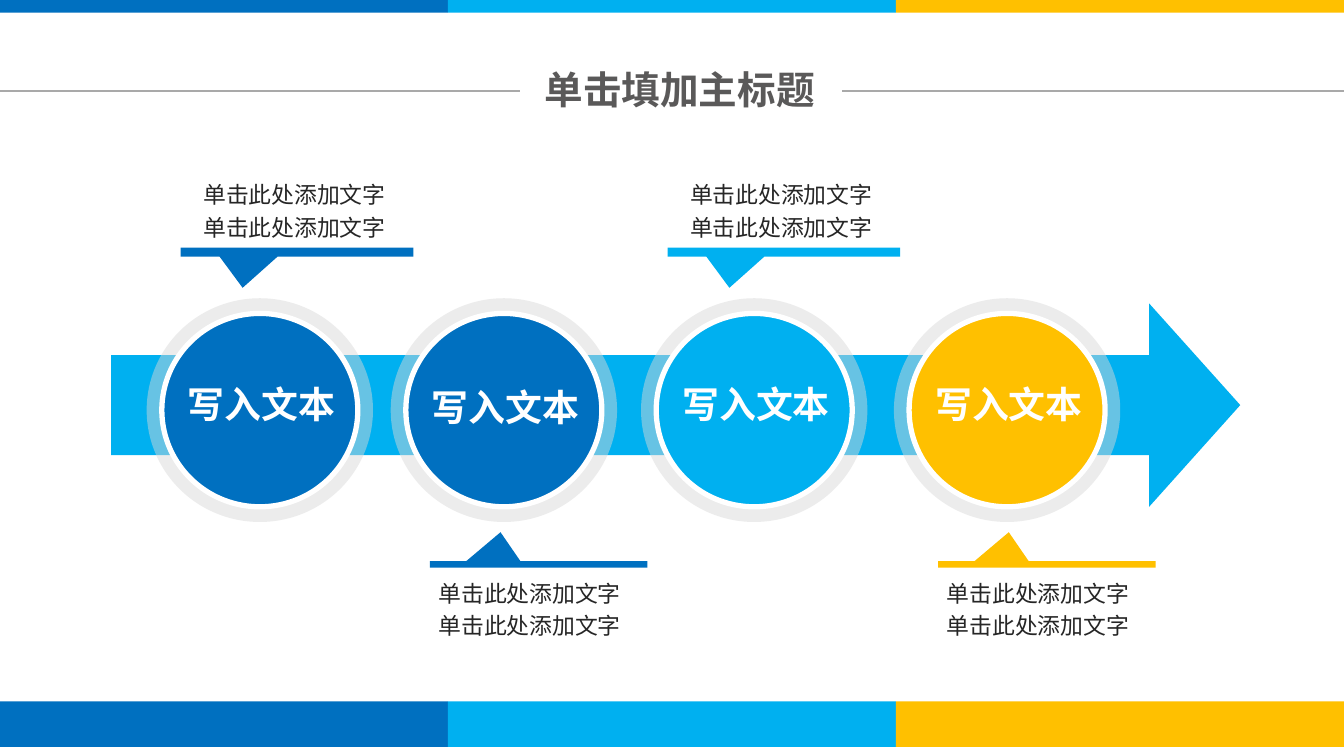
from dataclasses import dataclass
from lxml.etree import SubElement as Sub
from pptx import Presentation
from pptx.dml.color import RGBColor as Rgb
from pptx.enum.shapes import MSO_CONNECTOR as Link, MSO_SHAPE as Kind
from pptx.enum.text import MSO_ANCHOR as Anchor, MSO_AUTO_SIZE as Fit, PP_ALIGN as Align
from pptx.oxml.ns import qn
from pptx.shapes.autoshape import Shape
from pptx.text.text import TextFrame
from pptx.util import Emu, Pt

PX = 9144  # 100 px to the inch
WIDE, HIGH = 1063, 591
HAN = "Noto Sans CJK SC"
HEX = {
    "blue": "0070C0", "sky": "00B0F0", "gold": "FFC000", "white": "FFFFFF",
    "ring": "D8D8D8", "ink": "262626", "title": "5A5959", "rule": "A9A9A9",
}


@dataclass
class Stage:
    left: int  # ring
    tone: str
    bar: int  # left of the callout
    above: bool
    drop: int = 0  # label offset


@dataclass
class Style:
    size: int
    tone: str
    bold: bool = False
    align: Align = Align.LEFT
    space: float = 1.0
    face: str = HAN


LABEL = Style(21, "white", True, Align.CENTER)
NOTE = Style(13, "ink", space=1.2)
TITLE = Style(22, "title", True, Align.CENTER, face="Arial")
STAGES = [
    Stage(116, "blue", 143, True),
    Stage(309, "blue", 340, False, 2),
    Stage(507, "sky", 528, True),
    Stage(707, "gold", 742, False),
]


def px(*nums: float) -> list[Emu]:
    return [Emu(round(n * PX)) for n in nums]


def color(name: str) -> Rgb:
    return Rgb.from_string(HEX[name])


def draw(shapes, kind: Kind, at: tuple, tone: str, adj: tuple = ()) -> Shape:
    shape = shapes.add_shape(kind, *px(*at))
    shape.shadow.inherit = False
    shape.fill.solid()
    shape.fill.fore_color.rgb = color(tone)
    shape.line.fill.background()
    for i, value in enumerate(adj):
        shape.adjustments[i] = value
    return shape


def write(frame: TextFrame, lines: list[str], style: Style) -> None:
    frame.word_wrap = True
    frame.auto_size = Fit.NONE
    frame.vertical_anchor = Anchor.TOP
    for i, line in enumerate(lines):
        para = frame.add_paragraph() if i else frame.paragraphs[0]
        para.alignment = style.align
        para.line_spacing = style.space
        run = para.add_run()
        run.text = line
        font = run.font
        font.size, font.bold, font.name = Pt(style.size), style.bold, style.face
        font.color.rgb = color(style.tone)
        Sub(run._r.get_or_add_rPr(), qn("a:ea"), typeface=HAN)


def text(shapes, at: tuple, lines: list[str], style: Style) -> None:
    write(shapes.add_textbox(*px(*at)).text_frame, lines, style)


def band(shapes, top: int, tall: int) -> None:
    group = shapes.add_group_shape().shapes
    third = WIDE / 3
    for i, tone in enumerate(("blue", "sky", "gold")):
        draw(group, Kind.RECTANGLE, (i * third, top, third, tall), tone)


def rule(shapes, start: int, end: int) -> None:
    line = shapes.add_connector(Link.STRAIGHT, *px(start, 72, end, 72))
    line.line.color.rgb = color("rule")
    line.line.width = Pt(1)
    Sub(line._element.spPr, qn("a:effectLst"))


def circle(shapes, stage: Stage) -> None:
    group = shapes.add_group_shape().shapes
    ring = draw(group, Kind.OVAL, (stage.left, 236, 179, 177), "ring")
    fill = ring._element.spPr.find(qn("a:solidFill"))
    Sub(fill[0], qn("a:alpha"), val="48000")
    disc = draw(group, Kind.OVAL, (stage.left + 12, 248, 155, 153), stage.tone)
    disc.line.color.rgb = color("white")
    disc.line.width = Pt(3)
    text(group, (stage.left - 8, 297 + stage.drop, 198, 63), ["写入文本"], LABEL)


def callout(shapes, stage: Stage) -> None:
    if stage.above:
        at, adj, spot = (stage.bar, 196, 184, 7), (-0.234, 4.033), (stage.bar + 8, 134)
    else:
        at, adj, spot = (stage.bar, 444, 172, 5), (-0.175, -5.095), (stage.bar - 3, 449)
    draw(shapes, Kind.RECTANGULAR_CALLOUT, at, stage.tone, adj)
    text(shapes, (*spot, 172, 63), ["单击此处添加文字"] * 2, NOTE)


def main() -> None:
    deck = Presentation()
    deck.slide_width, deck.slide_height = px(WIDE, HIGH)
    shapes = deck.slides.add_slide(deck.slide_layouts[5]).shapes

    # Title between two rules
    title = shapes.title
    title.left, title.top, title.width, title.height = px(375, 47, 325, 47)
    write(title.text_frame, ["单击填加主标题"], TITLE)
    rule(shapes, 0, 411)
    rule(shapes, 666, WIDE)

    # Colour bands
    band(shapes, 0, 10)
    band(shapes, 555, 37)

    # Arrow with its stages
    draw(shapes, Kind.RIGHT_ARROW, (88, 240, 893, 161), "sky", (0.491, 0.448))
    for stage in STAGES:
        circle(shapes, stage)
        callout(shapes, stage)

    deck.save("out.pptx")


if __name__ == "__main__":
    main()
